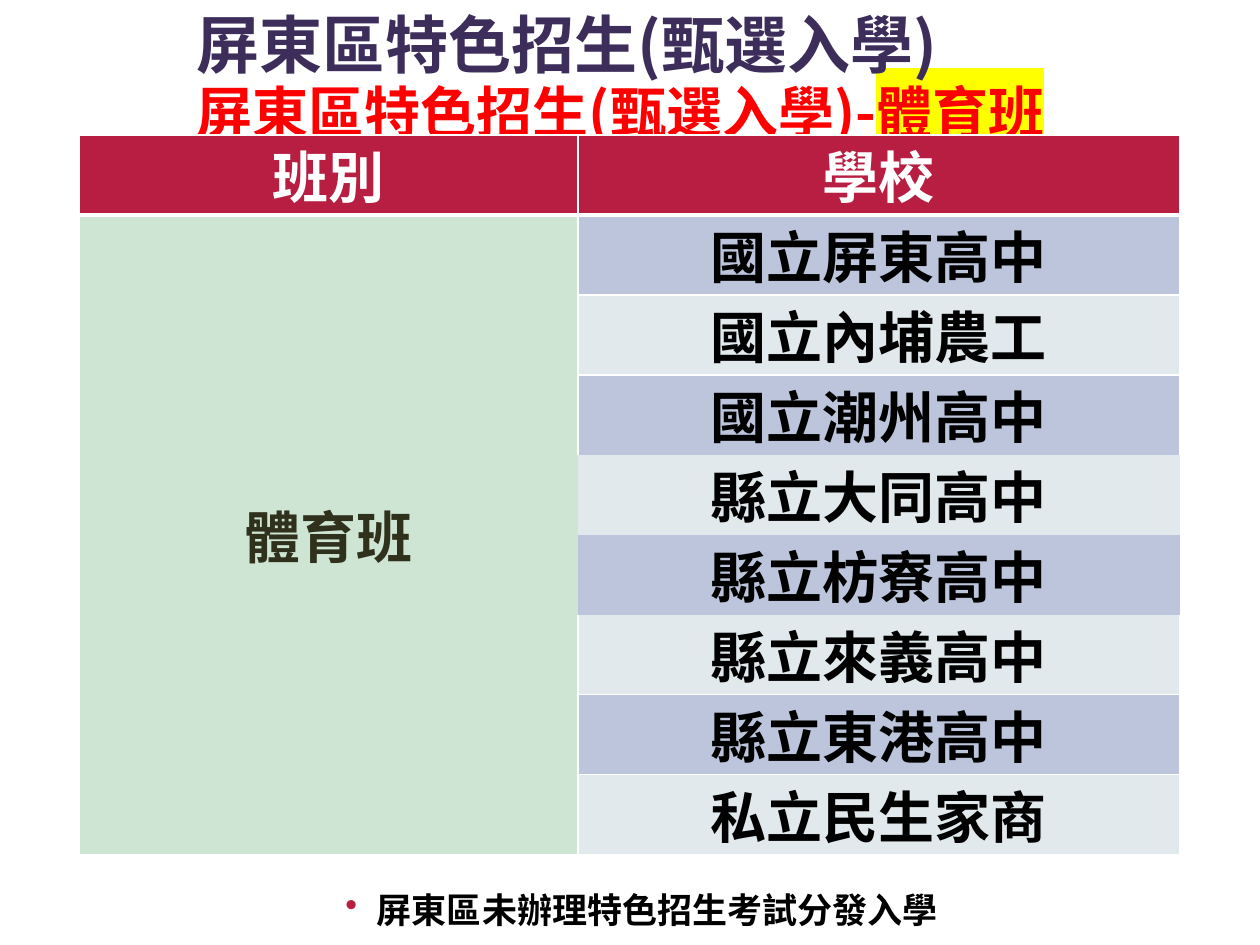
from lxml import etree
from pptx import Presentation
from pptx.dml.color import RGBColor
from pptx.enum.text import MSO_ANCHOR, PP_ALIGN
from pptx.oxml.ns import qn
from pptx.util import Emu, Pt

MIDDLE, TOP = MSO_ANCHOR.MIDDLE, MSO_ANCHOR.TOP
CENTER = PP_ALIGN.CENTER
EMU_PER_PX = 914400 / 126
FONT = "Noto Sans CJK SC"
COLORS = {
    "white": "FFFFFF", "black": "000000", "crimson": "B71E42", "red": "FF0000",
    "purple": "3C2D5A", "yellow": "FFFF00", "mint": "CEE5D3", "olive": "30311D",
    "blue": "BCC5DC", "pale": "E1E9EC",
}
SCHOOLS = ["國立屏東高中", "國立內埔農工", "國立潮州高中", "縣立大同高中",
           "縣立枋寮高中", "縣立來義高中", "縣立東港高中", "私立民生家商"]
OPEN_SIDES = {3: "B", 4: "LRTB", 5: "LRTB", 6: "T"}


def px(value):
    return Emu(round(value * EMU_PER_PX))


def rgb(name):
    return RGBColor.from_string(COLORS[name])


def add_color(parent, tag, color):
    holder = etree.SubElement(parent, qn(tag))
    etree.SubElement(holder, qn("a:srgbClr"), val=COLORS[color])
    return holder


def style_run(span, size, color, highlight=None):
    span.font.size = Pt(size)
    span.font.bold = True
    span.font.color.rgb = rgb(color)
    span.font.name = FONT
    properties = span.font._element
    latin = properties.find(qn("a:latin"))
    east_asian = etree.Element(qn("a:ea"), typeface=FONT)
    latin.addnext(east_asian)
    if highlight:
        latin.addprevious(add_color(properties, "a:highlight", highlight))


def add_text(page, box, parts, size, anchor):
    frame = page.shapes.add_textbox(*map(px, box)).text_frame
    frame.word_wrap = True
    frame.vertical_anchor = anchor
    para = frame.paragraphs[0]
    for text, color, highlight in parts:
        span = para.add_run()
        span.text = text
        style_run(span, size, color, highlight)
    return para


def add_note(page, box, text):
    para = add_text(page, box, [(text, "black", None)], 20, TOP)
    para.line_spacing = 1.2
    properties = para._p.get_or_add_pPr()
    properties.set("marL", "228600")
    properties.set("indent", "-228600")
    add_color(properties, "a:buClr", "crimson")
    etree.SubElement(properties, qn("a:buChar"), char="•")


def set_borders(cell, open_sides="", heavy_side=""):
    properties = cell._tc.get_or_add_tcPr()
    for index, side in enumerate("LRTB"):
        width = Pt(3 if side == heavy_side else 1)
        line = etree.Element(qn("a:ln" + side), w=str(width))
        if side in open_sides:
            etree.SubElement(line, qn("a:noFill"))
        else:
            add_color(line, "a:solidFill", "white")
        properties.insert(index, line)


def fill_cell(cell, text, fill, color):
    cell.fill.solid()
    cell.fill.fore_color.rgb = rgb(fill)
    cell.vertical_anchor = MIDDLE
    cell.margin_top, cell.margin_bottom = px(13), 0
    cell.text_frame.text = text
    para = cell.text_frame.paragraphs[0]
    para.alignment = CENTER
    para.line_spacing = Pt(38)
    for span in para.runs:
        style_run(span, 32, color)


def add_school_table(page, box):
    row_count = len(SCHOOLS) + 1
    table = page.shapes.add_table(row_count, 2, *map(px, box)).table
    for column, width in zip(table.columns, (499, box[2] - 499)):
        column.width = px(width)
    for row in table.rows:
        row.height = px(box[3] // row_count)

    for index, heading in enumerate(("班別", "學校")):
        cell = table.cell(0, index)
        fill_cell(cell, heading, "crimson", "white")
        set_borders(cell, heavy_side="B")

    for number, school in enumerate(SCHOOLS, 1):
        heavy_side = "T" if number == 1 else ""
        cell = table.cell(number, 1)
        fill_cell(cell, school, "blue" if number % 2 else "pale", "black")
        set_borders(cell, OPEN_SIDES.get(number, ""), heavy_side)
        fill_cell(table.cell(number, 0), "體育班" if number == 1 else "", "mint", "olive")
        set_borders(table.cell(number, 0), heavy_side=heavy_side)
    table.cell(1, 0).merge(table.cell(row_count - 1, 0))


def build():
    deck = Presentation()
    deck.slide_width, deck.slide_height = px(1260), px(945)
    page = deck.slides.add_slide(deck.slide_layouts[6])
    add_text(page, (184, 71, 1181, 80),
             [("屏東區特色招生(甄選入學)-", "red", None), ("體育班", "red", "yellow")], 32, MIDDLE)
    add_school_table(page, (79, 135, 1101, 720))
    add_text(page, (184, -1, 1181, 89), [("屏東區特色招生(甄選入學)", "purple", None)], 36, MIDDLE)
    add_note(page, (333, 874, 662, 59), "屏東區未辦理特色招生考試分發入學")
    deck.save("out.pptx")


if __name__ == "__main__":
    build()
